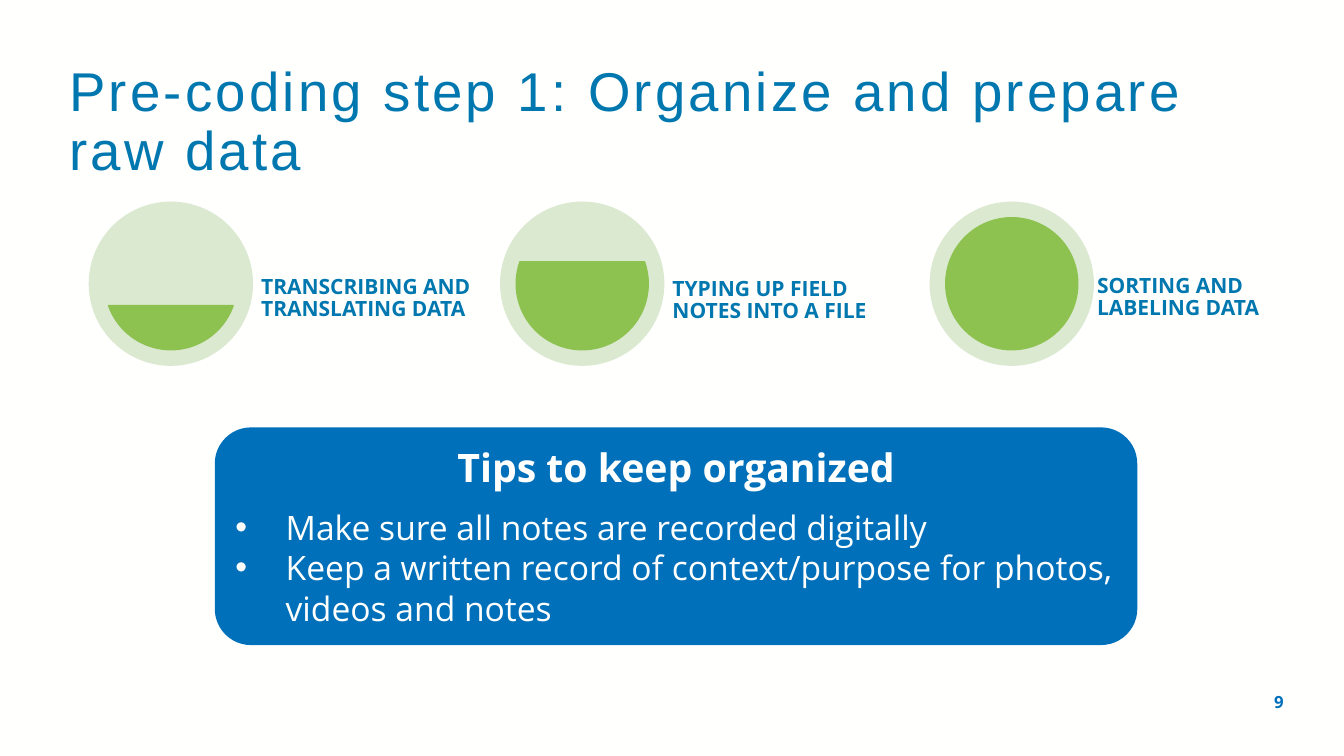
from dataclasses import dataclass

from lxml import etree
from pptx import Presentation
from pptx.dml.color import RGBColor
from pptx.enum.shapes import MSO_SHAPE
from pptx.enum.text import MSO_ANCHOR, PP_ALIGN
from pptx.oxml.ns import qn
from pptx.util import Inches, Pt

OVAL, CHORD, ROUND = MSO_SHAPE.OVAL, MSO_SHAPE.CHORD, MSO_SHAPE.ROUNDED_RECTANGLE
TOP, MIDDLE, BOTTOM = MSO_ANCHOR.TOP, MSO_ANCHOR.MIDDLE, MSO_ANCHOR.BOTTOM
LEFT, CENTER, RIGHT = PP_ALIGN.LEFT, PP_ALIGN.CENTER, PP_ALIGN.RIGHT

WHITE = RGBColor(0xFF, 0xFF, 0xFE)
TEAL = RGBColor(0x00, 0x77, 0xAF)
BLUE = RGBColor(0x00, 0x70, 0xBA)
PALE = RGBColor(0xDB, 0xE9, 0xD0)
GREEN = RGBColor(0x8D, 0xC2, 0x50)
SANS = "Open Sans"

DISC, DISC_TOP, RIM = 1.63, 2.0, 0.16


@dataclass
class Step:
    text: str
    left: float  # left edge of the disc
    arc: tuple[float, float]  # chord angles that set the fill level
    label: tuple[float, float, float]  # left, top, width


STEPS = [
    Step("TRANSCRIBING AND TRANSLATING DATA", 0.88, (11.68, 96.32), (2.55, 2.39, 2.32)),
    Step("TYPING UP FIELD NOTES INTO A FILE", 4.96, (204.32, 119.68), (6.63, 2.41, 2.44)),
    Step("SORTING AND LABELING DATA", 9.22, (162, 162), (10.84, 2.38, 2.12)),
]
TIPS = [
    "Make sure all notes are recorded digitally",
    "Keep a written record of context/purpose for photos, videos and notes",
]


def style(par, size: float, color: RGBColor, bold=False, align=LEFT, name=SANS) -> None:
    par.alignment = align
    font = par.font
    font.name, font.size, font.bold = name, Pt(size), bold
    font.color.rgb = color


def add_shape(slide, kind, left: float, top: float, width: float, height: float,
              color: RGBColor):
    shape = slide.shapes.add_shape(
        kind, Inches(left), Inches(top), Inches(width), Inches(height))
    shape.shadow.inherit = False
    shape.fill.solid()
    shape.fill.fore_color.rgb = color
    shape.line.fill.background()
    return shape


def add_text(slide, text: str, left: float, top: float, width: float, height: float,
             anchor=TOP):
    box = slide.shapes.add_textbox(
        Inches(left), Inches(top), Inches(width), Inches(height))
    frame = box.text_frame
    frame.word_wrap, frame.vertical_anchor = True, anchor
    frame.text = text
    return frame


def add_step(slide, step: Step) -> None:
    add_shape(slide, OVAL, step.left, DISC_TOP, DISC, DISC, PALE)
    size = DISC - 2 * RIM
    level = add_shape(slide, CHORD, step.left + RIM, DISC_TOP + RIM, size, size, GREEN)
    level.adjustments[0], level.adjustments[1] = step.arc
    level.line.color.rgb, level.line.width = GREEN, Pt(1)

    left, top, width = step.label
    frame = add_text(slide, step.text, left, top, width, 0.84, BOTTOM)
    frame.margin_left = frame.margin_right = Inches(0.04)
    frame.margin_top = frame.margin_bottom = Inches(0.04)
    par = frame.paragraphs[0]
    par.line_spacing = 0.9
    style(par, 15, TEAL, bold=True)


def add_tips(slide) -> None:
    panel = add_shape(slide, ROUND, 2.13, 4.24, 9.15, 2.16, BLUE)
    frame = panel.text_frame
    frame.word_wrap, frame.vertical_anchor = True, TOP
    head = frame.paragraphs[0]
    head.text = "Tips to keep organized"
    head.space_after = Pt(12)
    style(head, 28, WHITE, bold=True, align=CENTER)
    for tip in TIPS:
        par = frame.add_paragraph()
        par.text = tip
        props = par._p.get_or_add_pPr()
        props.set("marL", str(Inches(0.5)))
        props.set("indent", str(Inches(-0.5)))
        etree.SubElement(props, qn("a:buFont"), typeface="Arial")
        etree.SubElement(props, qn("a:buChar"), char="•")
        style(par, 24, WHITE)


def main() -> None:
    deck = Presentation()
    deck.slide_width, deck.slide_height = Inches(13.33), Inches(7.5)
    slide = deck.slides.add_slide(deck.slide_layouts[6])
    slide.background.fill.solid()
    slide.background.fill.fore_color.rgb = WHITE

    # Steps
    for step in STEPS:
        add_step(slide, step)

    # Title with wide letter spacing
    title = add_text(slide, "Pre-coding step 1: Organize and prepare raw data",
                     0.59, 0.59, 12.09, 1.26, MIDDLE).paragraphs[0]
    title.line_spacing = 0.9
    style(title, 39, TEAL, name="Arial")
    title.runs[0]._r.get_or_add_rPr().set("spc", "230")

    # Page number
    page = add_text(slide, "9", 11.71, 6.81, 1.12, 0.4).paragraphs[0]
    style(page, 12, BLUE, bold=True, align=RIGHT)

    # Tips panel
    add_tips(slide)
    deck.save("out.pptx")


if __name__ == "__main__":
    main()
